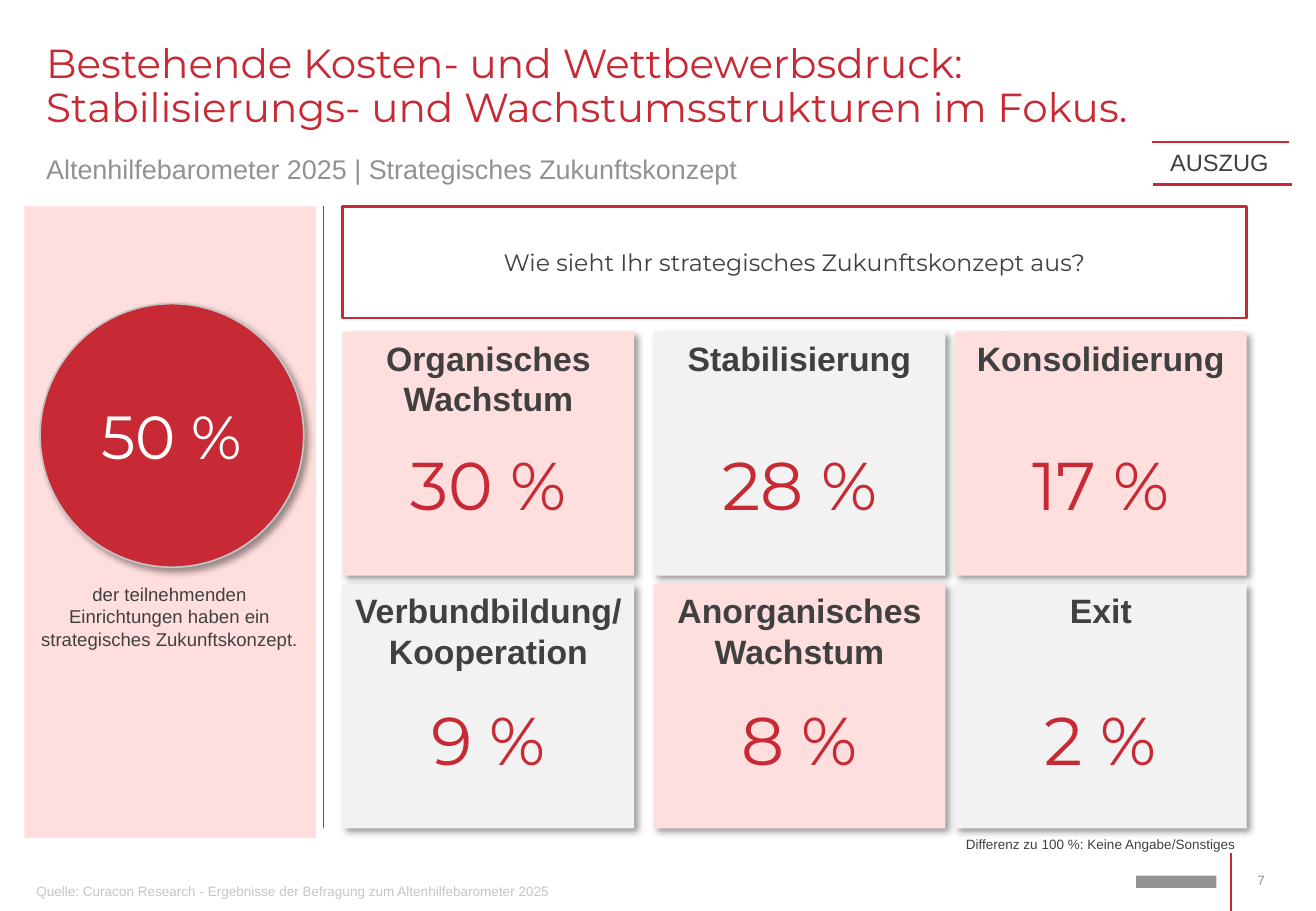
from lxml.etree import SubElement
from pptx import Presentation
from pptx.dml.color import RGBColor
from pptx.enum.shapes import MSO_CONNECTOR, MSO_SHAPE
from pptx.enum.text import MSO_ANCHOR, PP_ALIGN
from pptx.oxml.ns import qn
from pptx.util import Emu, Pt

RED, ROSE, PALE = "C72A34", "FFDFDE", "F2F2F2"
DARK, GREY, SILVER, WHITE = "404040", "929292", "C5C5C5", "FFFFFF"
SANS, HEAD = "Arial", "Montserrat"
LEFT, CENTER, RIGHT = PP_ALIGN.LEFT, PP_ALIGN.CENTER, PP_ALIGN.RIGHT

TITLE = ("Bestehende Kosten- und Wettbewerbsdruck: "
         "Stabilisierungs- und Wachstumsstrukturen im Fokus.")
SUBTITLE = "Altenhilfebarometer 2025 | Strategisches Zukunftskonzept"
QUESTION = "Wie sieht Ihr strategisches Zukunftskonzept aus?"
SHARE = "50 %"
SHARE_NOTE = "der teilnehmenden Einrichtungen haben ein strategisches Zukunftskonzept."
REST_NOTE = "Differenz zu 100 %: Keine Angabe/Sonstiges"
SOURCE = "Quelle: Curacon Research - Ergebnisse der Befragung zum Altenhilfebarometer 2025"

CONCEPTS = [
    [("Organisches Wachstum", "30 %"), ("Stabilisierung", "28 %"), ("Konsolidierung", "17 %")],
    [("Verbundbildung/\nKooperation", "9 %"), ("Anorganisches Wachstum", "8 %"), ("Exit", "2 %")],
]
COLUMN_X = [282, 538, 786]
ROW_Y = [(273, 360), (481, 570)]  # card top, value top
CARD_W, CARD_H, VALUE_H = 240, 201, 77

# text, box, size, font, colour, alignment, inset, line spacing
TEXTS = [
    (TITLE, (38, 36, 1008, 76), 24, HEAD, RED, LEFT, 0, 0.9),
    (SUBTITLE, (38, 123, 1008, 31), 16, SANS, GREY, LEFT, 0, 1.1),
    (SHARE_NOTE, (20, 475, 239, 66), 11, SANS, DARK, CENTER, 10, 1),
    (REST_NOTE, (785, 683, 256, 31), 8, SANS, DARK, LEFT, 10, 1),
    (SOURCE, (20, 722, 522, 31), 8, SANS, SILVER, LEFT, 10, 1),
    ("AUSZUG", (946, 117, 115, 34), 14, SANS, DARK, CENTER, 10, 1),
    ("7", (1018, 718, 23, 19), 8, SANS, GREY, RIGHT, 0, 1),
]
# start x, start y, end x, end y, width
LINES = [
    (266, 170, 266, 682, 0.5),
    (948, 117, 1061, 117, 1.5),
    (949, 152, 1063, 152, 1.5),
    (1013, 702, 1013, 750, 1),
]


def px(n):
    return Emu(n * 9144)


def rgb(hex_color):
    return RGBColor.from_string(hex_color)


def write(sp, text, size, font, color, align=CENTER, inset=10, spacing=1,
          bold=False, anchor=MSO_ANCHOR.TOP):
    tf = sp.text_frame
    tf.word_wrap = True
    tf.vertical_anchor = anchor
    tf.margin_left = tf.margin_right = px(inset)
    tf.margin_top = tf.margin_bottom = px(inset // 2)
    tf.text = text
    for p in tf.paragraphs:
        p.alignment = align
        p.line_spacing = spacing
        for r in p.runs:
            r.font.size = Pt(size)
            r.font.name = font
            r.font.bold = bold
            r.font.color.rgb = rgb(color)


def add_text(s, text, box, *style):
    write(s.shapes.add_textbox(*map(px, box)), text, *style)


def add_box(s, kind, box, fill, line=None, width=1, shadow=False):
    sp = s.shapes.add_shape(kind, *map(px, box))
    sp.fill.solid()
    sp.fill.fore_color.rgb = rgb(fill)
    if line:
        sp.line.color.rgb = rgb(line)
        sp.line.width = Pt(width)
    else:
        sp.line.fill.background()
    sp.shadow.inherit = False
    if shadow:
        effects = sp._element.spPr.find(qn("a:effectLst"))
        outer = SubElement(effects, qn("a:outerShdw"), blurRad="50800", dist="38100",
                           dir="2700000", algn="tl", rotWithShape="0")
        black = SubElement(outer, qn("a:srgbClr"), val="000000")
        SubElement(black, qn("a:alpha"), val="40000")
    return sp


def add_line(s, x1, y1, x2, y2, width):
    line = s.shapes.add_connector(MSO_CONNECTOR.STRAIGHT, *map(px, (x1, y1, x2, y2)))
    line.line.color.rgb = rgb(RED)
    line.line.width = Pt(width)
    SubElement(line._element.spPr, qn("a:effectLst"))


def main():
    prs = Presentation()
    prs.slide_width, prs.slide_height = px(1083), px(750)
    s = prs.slides.add_slide(prs.slide_layouts[6])

    add_box(s, MSO_SHAPE.RECTANGLE, (20, 170, 240, 520), ROSE)
    logo_box = (935, 721, 66, 10)
    add_box(s, MSO_SHAPE.RECTANGLE, logo_box, GREY)

    for row, (concepts, (card_y, value_y)) in enumerate(zip(CONCEPTS, ROW_Y)):
        for col, ((name, value), x) in enumerate(zip(concepts, COLUMN_X)):
            fill = PALE if (row + col) % 2 else ROSE
            card = add_box(s, MSO_SHAPE.RECTANGLE, (x, card_y, CARD_W, CARD_H), fill, shadow=True)
            write(card, name, 20, SANS, DARK, bold=True)
            add_text(s, value, (x, value_y, CARD_W, VALUE_H), 40, HEAD, RED)

    question = add_box(s, MSO_SHAPE.RECTANGLE, (282, 170, 744, 92), WHITE, RED, 1.5)
    write(question, QUESTION, 14, HEAD, DARK, anchor=MSO_ANCHOR.MIDDLE)
    circle = add_box(s, MSO_SHAPE.OVAL, (33, 250, 217, 217), RED, SILVER, shadow=True)
    write(circle, SHARE, 36, HEAD, WHITE, anchor=MSO_ANCHOR.MIDDLE)

    for text in TEXTS:
        add_text(s, *text)
    for line in LINES:
        add_line(s, *line)
    prs.save("out.pptx")


if __name__ == "__main__":
    main()
